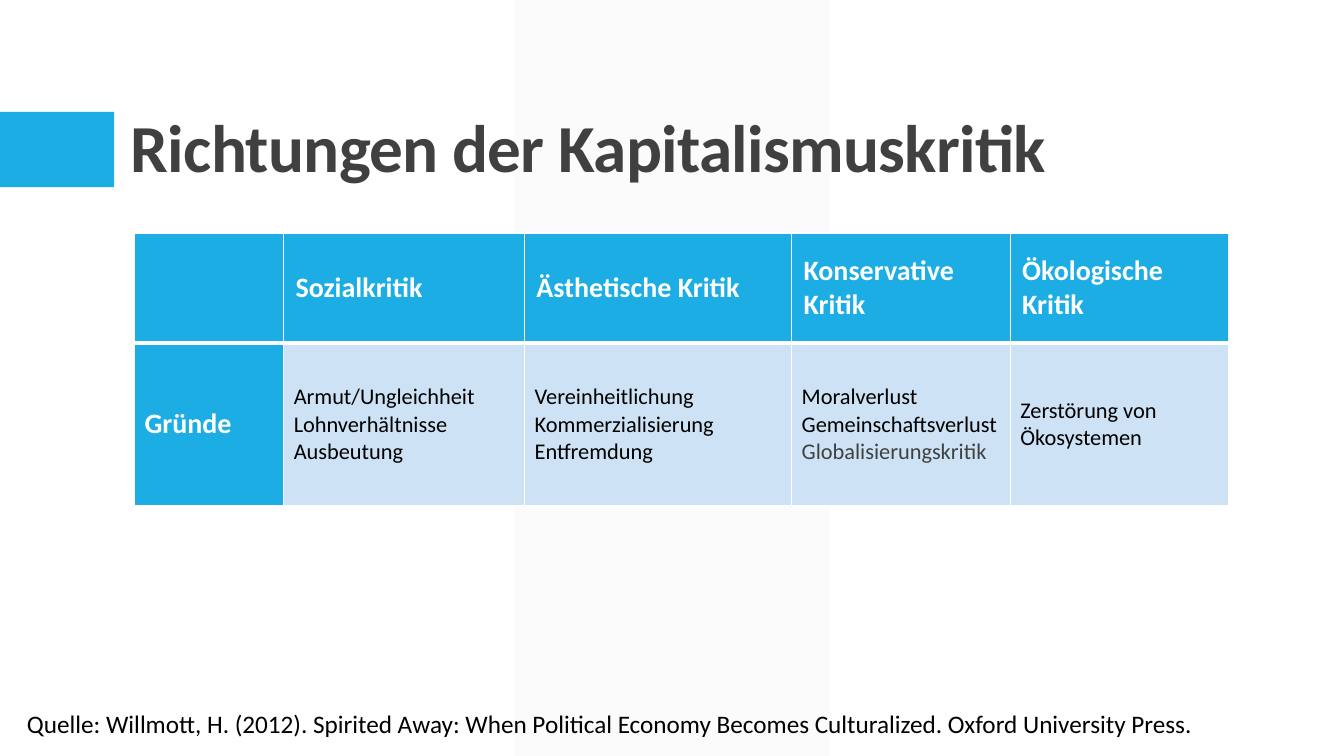
from lxml.etree import SubElement
from pptx import Presentation
from pptx.dml.color import RGBColor
from pptx.enum.shapes import MSO_SHAPE
from pptx.enum.text import MSO_ANCHOR
from pptx.oxml.ns import qn
from pptx.util import Cm, Pt

TITLE = "Richtungen der Kapitalismuskritik"
CRITIQUES = ["", "Sozialkritik", "Ästhetische Kritik", "Konservative Kritik", "Ökologische Kritik"]
REASONS = [
    ["Gründe"],
    ["Armut/Ungleichheit Lohnverhältnisse Ausbeutung"],
    ["Vereinheitlichung Kommerzialisierung Entfremdung"],
    ["Moralverlust Gemeinschaftsverlust", "Globalisierungskritik"],
    ["Zerstörung von Ökosystemen"],
]
SOURCE = ("Quelle: Willmott, H. (2012). Spirited Away: When Political Economy "
          "Becomes Culturalized. Oxford University Press.")
COLORS = {"accent": "1CADE4", "pale": "CDE3F5", "band": "F2F2F2",
          "dark": "404040", "black": "000000", "white": "FFFFFF"}
COLUMN_WIDTHS = [3.76, 6.07, 6.73, 5.51, 5.51]
ROW_HEIGHTS = [2.77, 4.11]


def color(name):
    return RGBColor.from_string(COLORS[name])


def write(frame, text, size, ink="black", bold=False, first=True, line_spacing=None, tracking=None):
    paragraph = frame.paragraphs[0] if first else frame.add_paragraph()
    paragraph.line_spacing = line_spacing
    run = paragraph.add_run()
    run.text = text
    run.font.name = "Calibri"
    run.font.size = Pt(size)
    run.font.bold = bold
    run.font.color.rgb = color(ink)
    if tracking is not None:
        run.font._element.set("spc", str(tracking))


def add_block(slide, preset, box, fill):
    block = slide.shapes.add_shape(preset, *map(Cm, box))
    block.shadow.inherit = False
    block.fill.solid()
    block.fill.fore_color.rgb = color(fill)
    block.line.fill.background()
    return block


def add_text(slide, box, text, anchor=MSO_ANCHOR.TOP, **style):
    frame = slide.shapes.add_textbox(*map(Cm, box)).text_frame
    frame.word_wrap = True
    frame.vertical_anchor = anchor
    write(frame, text, **style)


def format_cell(cell, fill, top, bottom):
    properties = cell._tc.get_or_add_tcPr()
    for side, width in zip("LRTB", (1, 1, top, bottom)):
        border = SubElement(properties, qn(f"a:ln{side}"), w=str(Pt(width)))
        ink = SubElement(border, qn("a:solidFill"))
        SubElement(ink, qn("a:srgbClr"), val=COLORS["white"])
    cell.fill.solid()
    cell.fill.fore_color.rgb = color(fill)
    cell.vertical_anchor = MSO_ANCHOR.MIDDLE


def add_critique_table(slide):
    table = slide.shapes.add_table(
        len(ROW_HEIGHTS), len(COLUMN_WIDTHS), Cm(3.39), Cm(5.87),
        Cm(sum(COLUMN_WIDTHS)), Cm(sum(ROW_HEIGHTS))).table
    table.horz_banding = False
    for column, width in zip(table.columns, COLUMN_WIDTHS):
        column.width = Cm(width)
    for row, height in zip(table.rows, ROW_HEIGHTS):
        row.height = Cm(height)
    for index, (critique, reasons) in enumerate(zip(CRITIQUES, REASONS)):
        header, body = table.cell(0, index), table.cell(1, index)
        format_cell(header, "accent", 1, 3)
        format_cell(body, "pale" if index else "accent", 3, 1)
        if critique:
            header.margin_left = header.margin_right = Cm(0.3)
            header.margin_top = header.margin_bottom = Cm(0.15)
            write(header.text_frame, critique, 20, "white", bold=True)
        for order, reason in enumerate(reasons):
            if index:
                write(body.text_frame, reason, 16, "dark" if order else "black", first=not order)
            else:
                write(body.text_frame, reason, 20, "white", bold=True)


def main():
    """Build the slide on directions of the critique of capitalism."""
    presentation = Presentation()
    presentation.slide_width, presentation.slide_height = Cm(33.87), Cm(19.05)
    slide = presentation.slides.add_slide(presentation.slide_layouts[6])
    band = add_block(slide, MSO_SHAPE.PARALLELOGRAM, (12.95, 0, 7.95, 19.05), "band")
    band.adjustments[0] = 0
    band_ink = band._element.spPr.find(qn("a:solidFill")).find(qn("a:srgbClr"))
    SubElement(band_ink, qn("a:alpha"), val="30000")
    add_block(slide, MSO_SHAPE.RECTANGLE, (0, 2.82, 2.88, 1.9), "accent")
    add_text(slide, (3.05, 0.79, 27.94, 4.04), TITLE, MSO_ANCHOR.BOTTOM, size=48,
             ink="dark", bold=True, line_spacing=0.9, tracking=-50)
    add_critique_table(slide)
    add_text(slide, (0.43, 17.73, 33.02, 1.02), SOURCE, size=18)
    presentation.save("out.pptx")


if __name__ == "__main__":
    main()
